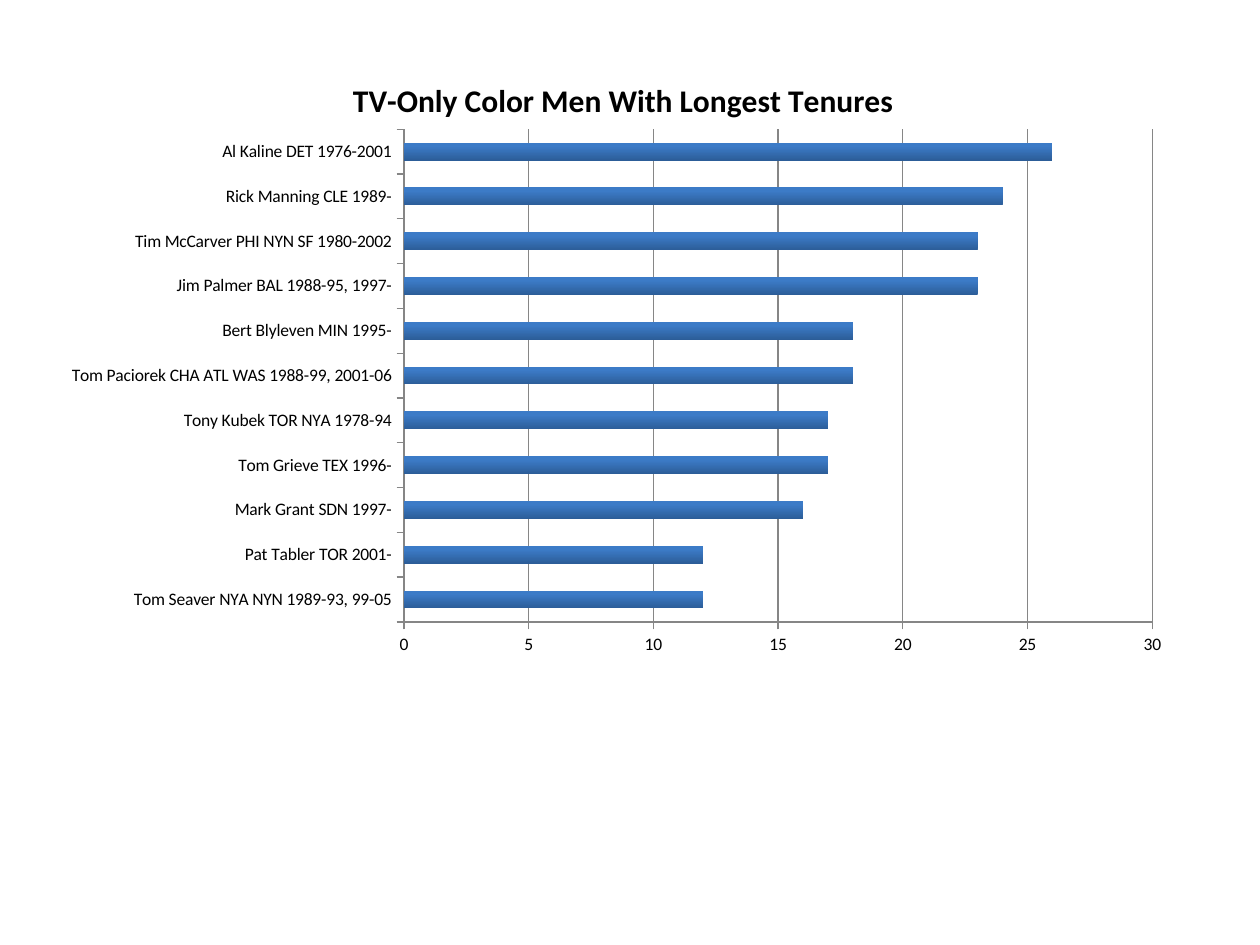
from pptx import Presentation
from pptx.chart.data import CategoryChartData as ChartData
from pptx.dml.color import RGBColor as RGB
from pptx.enum.chart import XL_CHART_TYPE as Kind, XL_TICK_MARK as Tick
from pptx.oxml import parse_xml
from pptx.oxml.ns import nsdecls, qn
from pptx.util import Pt

TITLE = "TV-Only Color Men With Longest Tenures"
YEARS = [
    ("Tom Seaver NYA NYN 1989-93, 99-05", 12),
    ("Pat Tabler TOR 2001-", 12),
    ("Mark Grant SDN 1997-", 16),
    ("Tom Grieve TEX 1996-", 17),
    ("Tony Kubek TOR NYA 1978-94", 17),
    ("Tom Paciorek CHA ATL WAS 1988-99, 2001-06", 18),
    ("Bert Blyleven MIN 1995-", 18),
    ("Jim Palmer BAL 1988-95, 1997-", 23),
    ("Tim McCarver PHI NYN SF 1980-2002", 23),
    ("Rick Manning CLE 1989-", 24),
    ("Al Kaline DET 1976-2001", 26),
]
STOPS = [(0, "2C5D98"), (0.8, "3C7BC7")]
GREY, BLACK = "868686", "000000"


def paint(color, value):
    color.rgb = RGB.from_string(value)


def style(font, size, bold):
    font.name, font.size, font.bold = "Calibri", Pt(size), bold
    paint(font.color, BLACK)


def rule(line):
    line.width = Pt(0.75)
    paint(line.color, GREY)


def place(node, index, inner="", **parts):
    for old in node.findall(qn("c:layout")):
        node.remove(old)
    modes = "".join(f'<c:{k}Mode val="edge"/>' for k in "xy")
    sizes = "".join(f'<c:{k} val="{v}"/>' for k, v in parts.items())
    node.insert(index, parse_xml(
        f'<c:layout {nsdecls("c")}><c:manualLayout>{inner}{modes}{sizes}'
        '</c:manualLayout></c:layout>'))


deck = Presentation()
deck.slide_width, deck.slide_height = Pt(720), Pt(540)
slide = deck.slides.add_slide(deck.slide_layouts[6])

data = ChartData()
data.categories = [name for name, _ in YEARS]
data.add_series(TITLE, [years for _, years in YEARS])
chart = slide.shapes.add_chart(
    Kind.BAR_CLUSTERED, Pt(30), Pt(24), Pt(648), Pt(356.4), data).chart
chart.has_legend = False
style(chart.font, 10, False)

chart.has_title = True
title = chart.chart_title
title.include_in_layout = False
title.text_frame.text = TITLE
style(title.text_frame.paragraphs[0].runs[0].font, 18, True)
place(title._element, 1, x=0.26, y=0.05)

names, scale = chart.category_axis, chart.value_axis
for axis in (names, scale):
    axis.major_tick_mark, axis.minor_tick_mark = Tick.OUTSIDE, Tick.NONE
    rule(axis.format.line)
names.has_major_gridlines = False
scale.has_major_gridlines = True
rule(scale.major_gridlines.format.line)
scale.minimum_scale, scale.maximum_scale, scale.major_unit = 0, 30, 5

plot = chart.plots[0]
plot.gap_width, plot.vary_by_categories = 150, False
fill = plot.series[0].format.fill
fill.gradient()
fill.gradient_angle = 90
for stop, (spot, value) in zip(fill.gradient_stops, STOPS):
    stop.position = spot
    paint(stop.color, value)
area = chart._chartSpace.find(".//" + qn("c:plotArea"))
place(area, 0, '<c:layoutTarget val="inner"/>', x=0.31, y=0.14, w=0.66, h=0.79)

deck.save("out.pptx")
